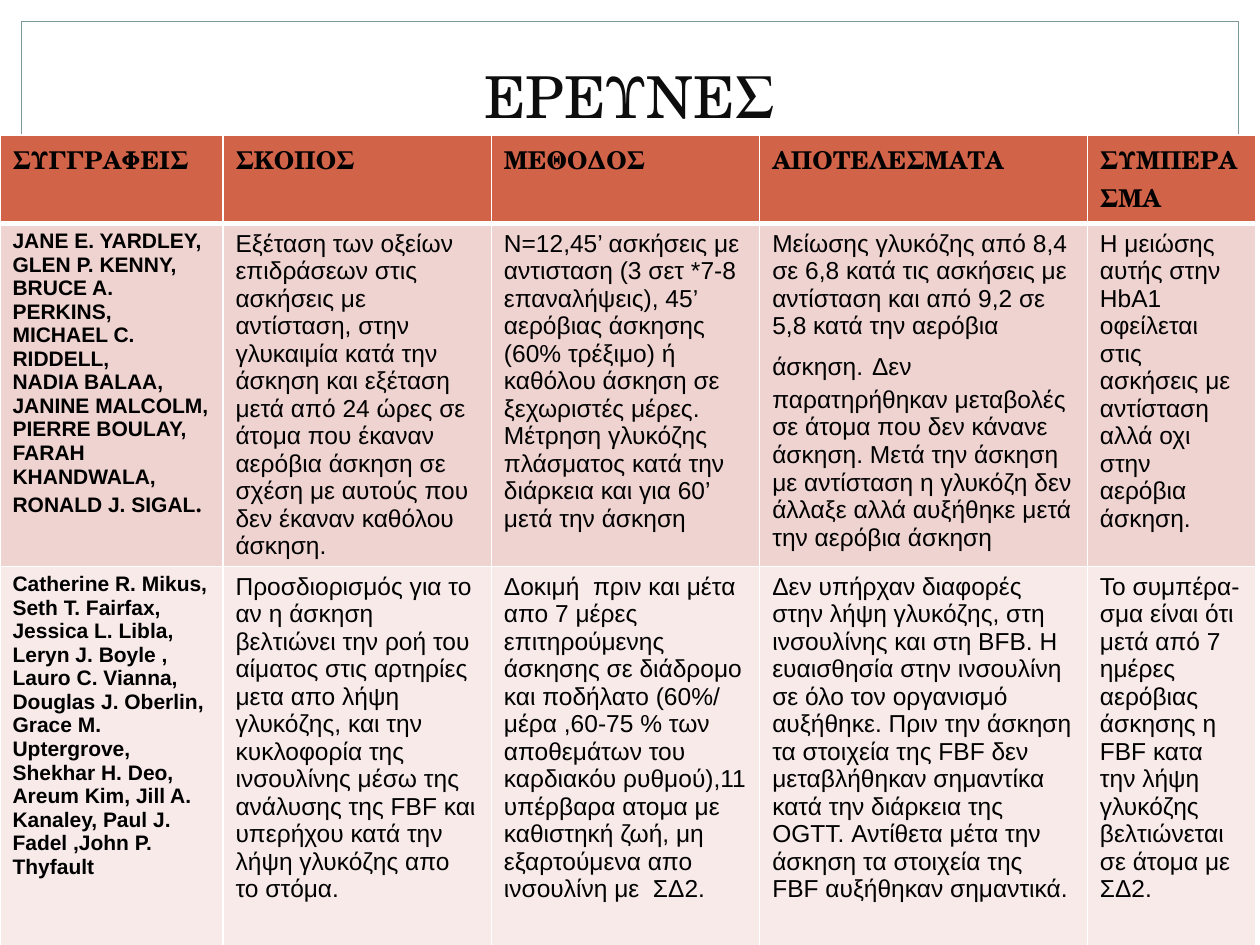
import pptx
import pptx.util
import pptx.dml.color
import pptx.enum.shapes
import pptx.enum.text
import pptx.oxml.ns
import lxml.etree

Inches = pptx.util.Inches

# Content
TITLE = "ΕΡΕΥΝΕΣ"
HEADERS = ["ΣΥΓΓΡΑΦΕΙΣ", "ΣΚΟΠΟΣ", "ΜΕΘΟΔΟΣ", "ΑΠΟΤΕΛΕΣΜΑΤΑ", "ΣΥΜΠΕΡΑΣΜΑ"]
# A cell is a list of paragraphs; a paragraph is a list of (text, style) runs
FIRST_AUTHORS = [
    "JANE E. YARDLEY,", "GLEN P. KENNY,", "BRUCE A. PERKINS,",
    "MICHAEL C. RIDDELL,", "NADIA BALAA,", "JANINE MALCOLM,",
    "PIERRE BOULAY,", "FARAH KHANDWALA,",
]
FIRST_STUDY = [
    [[(author, "authors")] for author in FIRST_AUTHORS]
    + [[("RONALD J. SIGAL", "authors"), (".", "stop")]],
    [[("Εξέταση των οξείων επιδράσεων στις ασκήσεις με αντίσταση, στην γλυκαιμία "
       "κατά την άσκηση και εξέταση μετά από 24 ώρες σε άτομα που έκαναν αερόβια "
       "άσκηση σε σχέση με αυτούς που δεν έκαναν καθόλου άσκηση.", "body")]],
    [[("Ν=12,45’ ασκήσεις με αντισταση (3 σετ *7-8 επαναλήψεις), 45’ αερόβιας "
       "άσκησης (60% τρέξιμο) ή καθόλου άσκηση σε ξεχωριστές μέρες. Μέτρηση "
       "γλυκόζης πλάσματος κατά την διάρκεια και για 60’ μετά την άσκηση", "body")]],
    [[("Μείωσης γλυκόζης από 8,4 σε 6,8 κατά τις ασκήσεις με αντίσταση και από "
       "9,2 σε 5,8 κατά την αερόβια άσκηση.", "body"),
      (" ", "gap"),
      ("Δεν παρατηρήθηκαν μεταβολές σε άτομα που δεν κάνανε άσκηση. Μετά την "
       "άσκηση με αντίσταση η γλυκόζη δεν άλλαξε αλλά αυξήθηκε μετά την αερόβια "
       "άσκηση", "body")]],
    [[("Η μειώσης αυτής στην HbA1 οφείλεται στις ασκήσεις με αντίσταση αλλά οχι "
       "στην αερόβια άσκηση.", "body")]],
]
SECOND_STUDY = [
    [[("Catherine R. Mikus, Seth T. Fairfax, Jessica L. Libla, Leryn J. Boyle , "
       "Lauro C. Vianna, Douglas J. Oberlin, Grace M. Uptergrove, Shekhar H. Deo, "
       "Areum Kim, Jill A. Kanaley, Paul J. Fadel ,John P. Thyfault", "authors")]],
    [[("Προσδιορισμός για το αν η άσκηση βελτιώνει την ροή του αίματος στις "
       "αρτηρίες μετα απο λήψη γλυκόζης, και την κυκλοφορία της ινσουλίνης μέσω "
       "της ανάλυσης της FBF και υπερήχου κατά την λήψη γλυκόζης απο το στόμα.",
       "body")]],
    [[("Δοκιμή  πριν και μέτα απο 7 μέρες επιτηρούμενης άσκησης σε διάδρομο και "
       "ποδήλατο (60%/ μέρα ,60-75 % των αποθεμάτων του καρδιακόυ ρυθμού),11 "
       "υπέρβαρα ατομα με καθιστηκή ζωή, μη εξαρτούμενα απο ινσουλίνη με  ΣΔ2.",
       "body")]],
    [[("Δεν υπήρχαν διαφορές στην λήψη γλυκόζης, στη ινσουλίνης και στη BFB. Η "
       "ευαισθησία στην ινσουλίνη σε όλο τον οργανισμό αυξήθηκε. Πριν την άσκηση "
       "τα στοιχεία της FBF δεν μεταβλήθηκαν σημαντίκα κατά την διάρκεια της OGTT. "
       "Αντίθετα μέτα την άσκηση τα στοιχεία της FBF αυξήθηκαν σημαντικά.", "body")]],
    [[("Το συμπέρα-σμα είναι ότι μετά από 7 ημέρες αερόβιας άσκησης η FBF κατα την "
       "λήψη γλυκόζης βελτιώνεται σε άτομα με ΣΔ2.", "body")]],
]
ROWS = [[[[(header, "header")]] for header in HEADERS], FIRST_STUDY, SECOND_STUDY]

# Format
COLORS = {"background": "C5D1D7", "white": "FFFFFF", "frame": "7C999A",
          "title": "0D0D0D", "text": "000000"}
ROW_FILLS = ["D16349", "EED3D0", "F7EAE9"]
COLUMN_WIDTHS = [1.77, 2.13, 2.13, 2.6, 1.34]
ROW_HEIGHTS = [0.59, 2.72, 5.25]
SERIF, SANS = "TeX Gyre Schola", "Arial"
STYLES = {
    "title": {"name": SERIF, "size": pptx.util.Pt(33), "bold": False},
    "header": {"name": SERIF, "size": pptx.util.Pt(14), "bold": True},
    "authors": {"name": SANS, "size": pptx.util.Pt(12), "bold": True},
    "stop": {"name": SERIF, "size": pptx.util.Pt(12), "bold": True},
    "body": {"name": SANS, "size": pptx.util.Pt(14), "bold": False},
    "gap": {"name": SERIF, "size": pptx.util.Pt(18), "bold": False},
}
WIDTH, HEIGHT, MARGIN, BAND = 10, 7.5, 0.17, 1.52
WHITE_EDGES = [
    (0, HEIGHT - MARGIN, WIDTH, MARGIN),
    (0, 0, WIDTH, BAND),
    (0, 0, MARGIN, HEIGHT),
    (WIDTH - MARGIN, 0, MARGIN, HEIGHT),
]


def rgb(value):
    return pptx.dml.color.RGBColor.from_string(value)


def add_run(paragraph, text, style, color):
    run = paragraph.add_run()
    run.text = text
    for name, value in STYLES[style].items():
        setattr(run.font, name, value)
    run.font.color.rgb = rgb(COLORS[color])


def add_rectangle(slide, box):
    shape = slide.shapes.add_shape(
        pptx.enum.shapes.MSO_SHAPE.RECTANGLE, *[Inches(length) for length in box])
    shape.shadow.inherit = False
    return shape


def add_borders(cell, bottom_width):
    properties = cell._tc.get_or_add_tcPr()
    qn = pptx.oxml.ns.qn
    for side, points in {"L": 1, "R": 1, "T": 1, "B": bottom_width}.items():
        line = lxml.etree.SubElement(
            properties, qn("a:ln" + side), w=str(pptx.util.Pt(points)))
        fill = lxml.etree.SubElement(line, qn("a:solidFill"))
        lxml.etree.SubElement(fill, qn("a:srgbClr"), val=COLORS["white"])


def main():
    presentation = pptx.Presentation()
    presentation.slide_width = Inches(WIDTH)
    presentation.slide_height = Inches(HEIGHT)
    slide = presentation.slides.add_slide(presentation.slide_layouts[5])
    slide.background.fill.solid()
    slide.background.fill.fore_color.rgb = rgb(COLORS["background"])

    # White edges and thin frame
    for box in WHITE_EDGES:
        edge = add_rectangle(slide, box)
        edge.fill.solid()
        edge.fill.fore_color.rgb = rgb(COLORS["white"])
        edge.line.fill.background()
    frame = add_rectangle(
        slide, (MARGIN, MARGIN, WIDTH - 2 * MARGIN, HEIGHT - 2 * MARGIN))
    frame.fill.background()
    frame.line.color.rgb = rgb(COLORS["frame"])
    frame.line.width = pptx.util.Pt(0.75)

    # Title, brought in front of the edges
    title = slide.shapes.title
    slide.shapes._spTree.append(title._element)
    title.left, title.top = Inches(0.33), Inches(0.25)
    title.width, title.height = Inches(9.33), Inches(0.83)
    title.text_frame.vertical_anchor = pptx.enum.text.MSO_ANCHOR.BOTTOM
    paragraph = title.text_frame.paragraphs[0]
    paragraph.alignment = pptx.enum.text.PP_ALIGN.CENTER
    add_run(paragraph, TITLE, "title", "title")

    # Table of studies
    table = slide.shapes.add_table(
        len(ROWS), len(HEADERS), Inches(0), Inches(1.07),
        Inches(sum(COLUMN_WIDTHS)), Inches(sum(ROW_HEIGHTS))).table
    for column, width in zip(table.columns, COLUMN_WIDTHS):
        column.width = Inches(width)
    for row_index, (row, contents) in enumerate(zip(table.rows, ROWS)):
        row.height = Inches(ROW_HEIGHTS[row_index])
        for cell, paragraphs in zip(row.cells, contents):
            add_borders(cell, 3 if row_index == 0 else 1)
            cell.fill.solid()
            cell.fill.fore_color.rgb = rgb(ROW_FILLS[row_index])
            for index, runs in enumerate(paragraphs):
                frame = cell.text_frame
                paragraph = frame.add_paragraph() if index else frame.paragraphs[0]
                for text, style in runs:
                    add_run(paragraph, text, style, "text")

    presentation.save("out.pptx")


if __name__ == "__main__":
    main()
